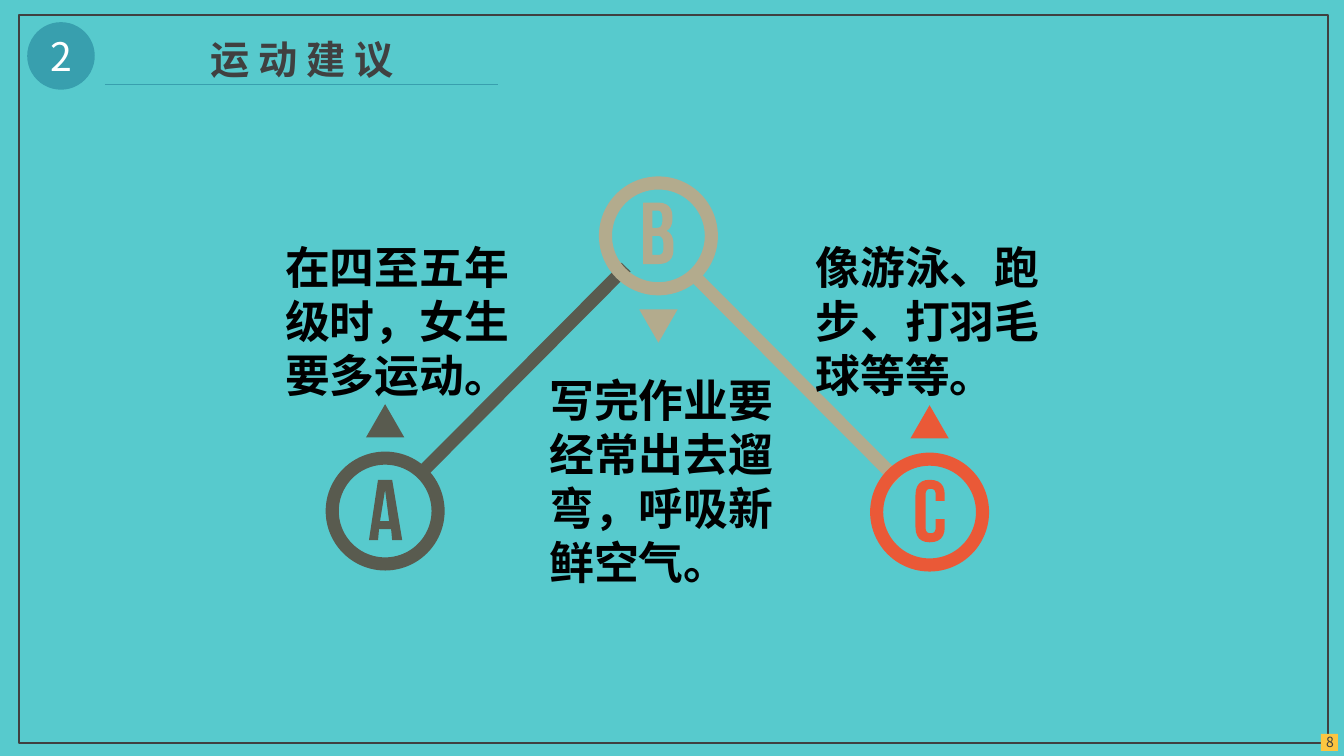
from lxml.etree import SubElement
from pptx import Presentation
from pptx.dml.color import RGBColor
from pptx.enum.shapes import MSO_CONNECTOR, MSO_SHAPE
from pptx.enum.text import MSO_ANCHOR, MSO_AUTO_SIZE, PP_ALIGN
from pptx.oxml.ns import qn
from pptx.util import Inches, Pt

COLORS = {
    "background": "57CACD", "ink": "404040", "teal": "389FAE", "white": "FFFFFF",
    "yellow": "FDC540", "black": "000000",
    "A": "595B4F", "B": "B3AB8D", "C": "EA5937",
}
HEADING_FONT = "Noto Sans CJK JP"
NUMBER_FONT = "Noto Sans CJK SC"


def write(shape, text, size, color, font=HEADING_FONT, bold=False,
          align=PP_ALIGN.LEFT, anchor=MSO_ANCHOR.TOP, wrap=True):
    frame = shape.text_frame
    frame.auto_size = MSO_AUTO_SIZE.NONE
    frame.word_wrap = wrap
    frame.vertical_anchor = anchor
    paragraph = frame.paragraphs[0]
    paragraph.alignment = align
    run = paragraph.add_run()
    run.text = text
    run.font.size = Pt(size)
    run.font.bold = bold
    run.font.color.rgb = RGBColor.from_string(COLORS[color])
    run.font.name = font
    SubElement(run.font._element, qn("a:ea"), typeface=font)


def paint(shape, color):
    shape.shadow.inherit = False
    shape.fill.solid()
    shape.fill.fore_color.rgb = RGBColor.from_string(COLORS[color])
    shape.line.fill.background()


prs = Presentation()
prs.slide_width, prs.slide_height = Inches(13.33), Inches(7.5)
slide = prs.slides.add_slide(prs.slide_layouts[5])
slide.background.fill.solid()
slide.background.fill.fore_color.rgb = RGBColor.from_string(COLORS["background"])
shapes = slide.shapes

border = shapes.add_shape(MSO_SHAPE.RECTANGLE, Inches(0.19), Inches(0.15),
                          Inches(12.98), Inches(7.22))
border.shadow.inherit = False
border.fill.background()
border.line.color.rgb = RGBColor.from_string(COLORS["ink"])
border.line.width = Pt(1)

heading = shapes.title
heading.left, heading.top = Inches(1.84), Inches(0.3)
heading.width, heading.height = Inches(2.31), Inches(0.57)
write(heading, "运 动 建 议", 28, "ink", bold=True, align=PP_ALIGN.CENTER, wrap=False)

section = shapes.add_shape(MSO_SHAPE.OVAL, Inches(0.27), Inches(0.22),
                           Inches(0.67), Inches(0.67))
paint(section, "teal")
write(section, "2", 28, "white", font=NUMBER_FONT, align=PP_ALIGN.CENTER,
      anchor=MSO_ANCHOR.MIDDLE)

page_mark = shapes.add_shape(MSO_SHAPE.RECTANGLE, Inches(13.1), Inches(7.28),
                             Inches(0.17), Inches(0.17))
paint(page_mark, "yellow")
page_number = shapes.add_textbox(Inches(12.97), Inches(7.28), Inches(0.44), Inches(0.17))
write(page_number, "8", 10, "ink", font=NUMBER_FONT, align=PP_ALIGN.CENTER,
      anchor=MSO_ANCHOR.MIDDLE)

links = [
    (1.04, 0.84, 4.94, 0.84, "teal", 0.5),
    (4.22, 4.65, 6.21, 2.65, "A", 9),
    (6.92, 2.77, 8.9, 4.76, "B", 9),
]
for x1, y1, x2, y2, color, weight in links:
    link = shapes.add_connector(MSO_CONNECTOR.STRAIGHT, Inches(x1), Inches(y1),
                                Inches(x2), Inches(y2))
    link.line.color.rgb = RGBColor.from_string(COLORS[color])
    link.line.width = Pt(weight)
    SubElement(link._element.spPr, qn("a:effectLst"))

RING, BAND = 1.18, 0.13
POINTER_WIDTH, POINTER_HEIGHT = 0.38, 0.33
advice = [
    ("A", 3.82, 5.07, 4.01, 0, "在四至五年级时，女生要多运动。", 2.73, 2.33, 1.72),
    ("B", 6.53, 2.34, 3.07, 180, "写完作业要经常出去遛弯，呼吸新鲜空气。", 5.35, 3.65, 2.25),
    ("C", 9.22, 5.08, 4.02, 0, "像游泳、跑步、打羽毛球等等。", 7.99, 2.33, 1.72),
]
for letter, x, y, pointer_top, turn, tip, left, top, height in advice:
    ring = shapes.add_shape(MSO_SHAPE.DONUT, Inches(x - RING / 2), Inches(y - RING / 2),
                            Inches(RING), Inches(RING))
    ring.adjustments[0] = BAND / RING
    paint(ring, letter)
    pointer = shapes.add_shape(MSO_SHAPE.ISOSCELES_TRIANGLE,
                               Inches(x - POINTER_WIDTH / 2), Inches(pointer_top),
                               Inches(POINTER_WIDTH), Inches(POINTER_HEIGHT))
    pointer.rotation = turn
    paint(pointer, letter)
    tip_box = shapes.add_textbox(Inches(left), Inches(top), Inches(2.62), Inches(height))
    write(tip_box, tip, 32, "black", bold=True)

# Two numbers are a corner; six are a cubic curve.
letter_outlines = {
    "A": [
        [(3.99, 5.36), (3.89, 5.36), (3.88, 5.25), (3.76, 5.25), (3.75, 5.36),
         (3.66, 5.36), (3.75, 4.76), (3.89, 4.76)],
        [(3.77, 5.17), (3.86, 5.17), (3.82, 4.86)],
    ],
    "B": [
        [(6.67, 2.15), (6.67, 2.17), (6.67, 2.23, 6.65, 2.27, 6.61, 2.29),
         (6.66, 2.31, 6.68, 2.36, 6.68, 2.43), (6.68, 2.48),
         (6.68, 2.57, 6.63, 2.62, 6.53, 2.62), (6.38, 2.62), (6.38, 2.01),
         (6.53, 2.01), (6.62, 2.01, 6.67, 2.06, 6.67, 2.15)],
        [(6.47, 2.09), (6.47, 2.26), (6.52, 2.26), (6.55, 2.26, 6.57, 2.24, 6.57, 2.19),
         (6.57, 2.16), (6.57, 2.11, 6.55, 2.09, 6.53, 2.09)],
        [(6.47, 2.34), (6.47, 2.53), (6.53, 2.53), (6.56, 2.53, 6.58, 2.51, 6.58, 2.47),
         (6.58, 2.42), (6.58, 2.36, 6.56, 2.34, 6.52, 2.34)],
    ],
    "C": [
        [(9.37, 5.15), (9.37, 5.23), (9.37, 5.33, 9.32, 5.38, 9.22, 5.38),
         (9.13, 5.38, 9.08, 5.33, 9.08, 5.23), (9.08, 4.91),
         (9.08, 4.81, 9.13, 4.76, 9.22, 4.76), (9.32, 4.76, 9.37, 4.81, 9.37, 4.91),
         (9.37, 4.97), (9.28, 4.97), (9.28, 4.91),
         (9.28, 4.86, 9.26, 4.85, 9.23, 4.85), (9.2, 4.85, 9.18, 4.86, 9.18, 4.91),
         (9.18, 5.23), (9.18, 5.28, 9.2, 5.29, 9.23, 5.29),
         (9.26, 5.29, 9.28, 5.28, 9.28, 5.23), (9.28, 5.15)],
    ],
}
CURVE_STEPS = 6
for letter, contours in letter_outlines.items():
    start = contours[0][0]
    builder = shapes.build_freeform(Inches(start[0]), Inches(start[1]))
    for contour in contours:
        points = [contour[0]]
        for step in contour[1:]:
            if len(step) == 2:
                points.append(step)
                continue
            (x0, y0), (x1, y1, x2, y2, x3, y3) = points[-1], step
            for i in range(1, CURVE_STEPS + 1):
                t = i / CURVE_STEPS
                u = 1 - t
                points.append((
                    u**3 * x0 + 3 * u * u * t * x1 + 3 * u * t * t * x2 + t**3 * x3,
                    u**3 * y0 + 3 * u * u * t * y1 + 3 * u * t * t * y2 + t**3 * y3,
                ))
        if contour is not contours[0]:
            builder.move_to(Inches(points[0][0]), Inches(points[0][1]))
        builder.add_line_segments([(Inches(px), Inches(py)) for px, py in points[1:]],
                                  close=True)
    paint(builder.convert_to_shape(), letter)

prs.save("out.pptx")
